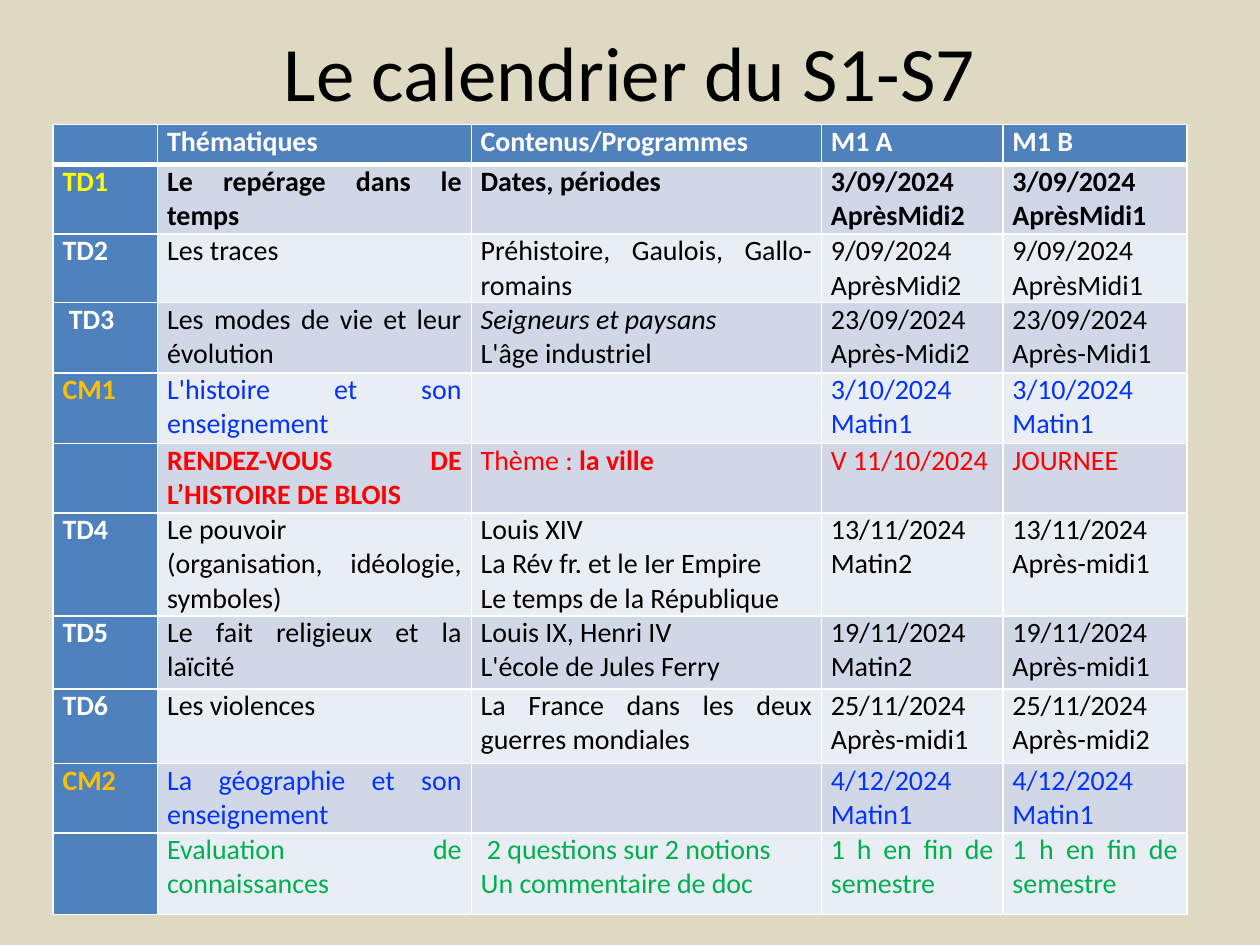
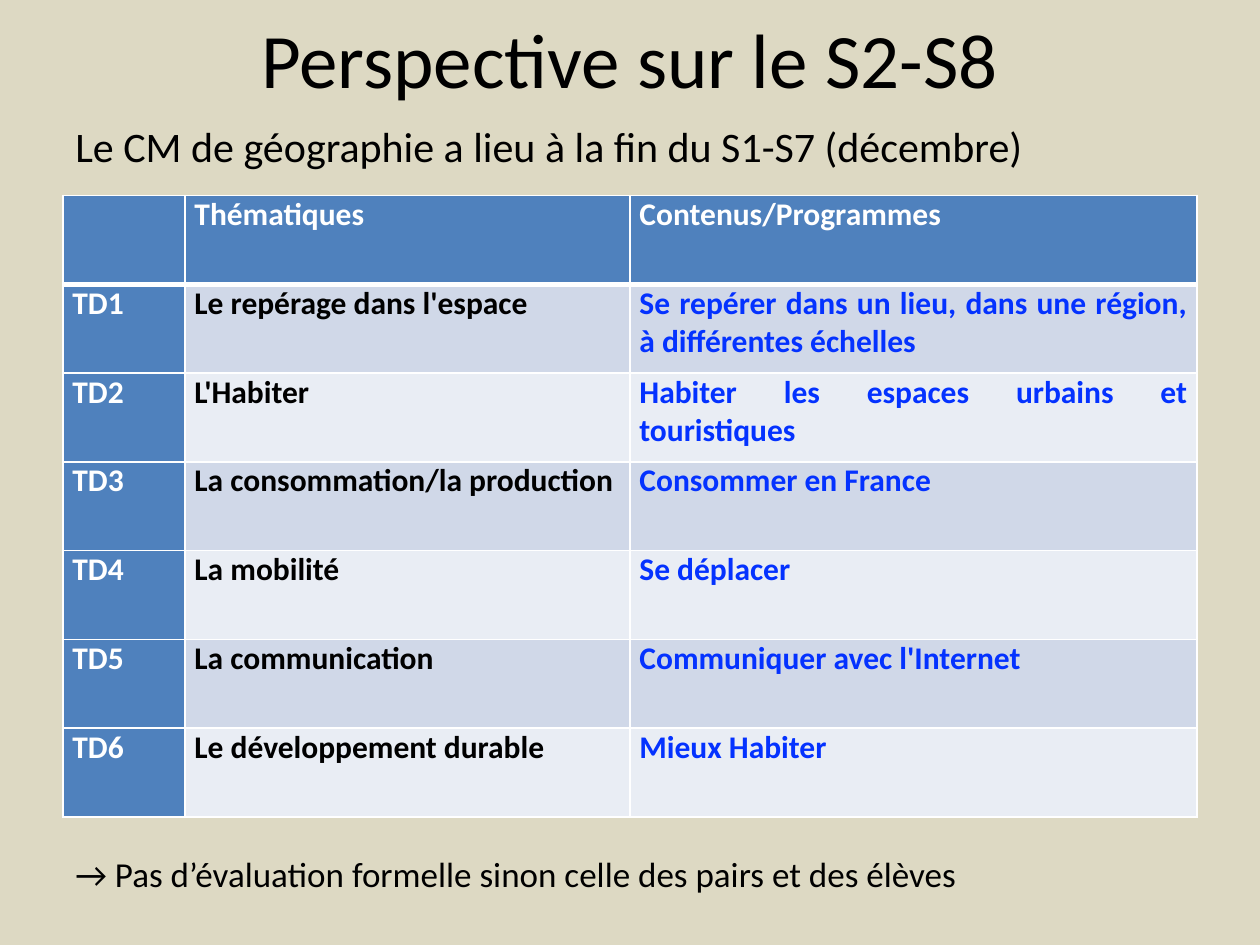
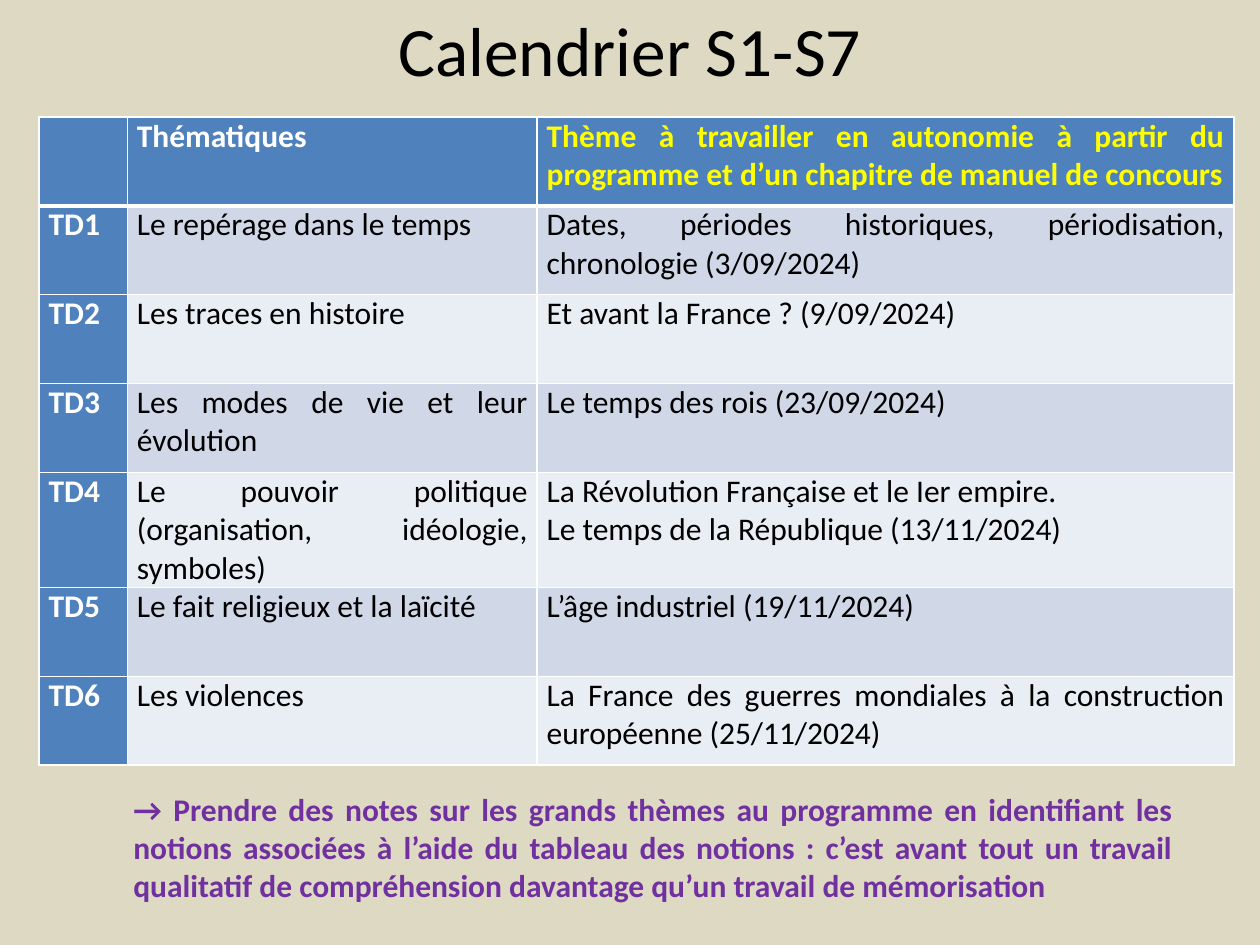
from lxml.etree import SubElement
from pptx import Presentation
from pptx.dml.color import RGBColor
from pptx.enum.text import MSO_ANCHOR as Anchor, MSO_AUTO_SIZE as AutoSize, PP_ALIGN as Align
from pptx.oxml.ns import qn
from pptx.util import Cm, Pt

FONT = "Calibri"
BEIGE, WHITE, BLACK = "DDD9C3", "FFFFFF", "000000"
HEADER, BANDS = "4F81BD", ("D0D8E8", "E9EDF4")
YELLOW, ORANGE, BLUE = "FFFF00", "FFC000", "0432FF"
RED, GREEN, PURPLE = "FF0000", "00B050", "7030A0"


def rgb(value):
    return RGBColor.from_string(value)


def set_borders(cell, **widths):
    """Draw white borders; widths are points keyed by side (L, R, T, B)."""
    tc_pr = cell._tc.get_or_add_tcPr()
    for side in "LRTB":
        ln = SubElement(tc_pr, qn(f"a:ln{side}"), w=str(Pt(widths.get(side, 1))))
        fill = SubElement(ln, qn("a:solidFill"))
        SubElement(fill, qn("a:srgbClr"), val=WHITE)


class Deck:
    """Holds the shared style and the current slide."""

    def __init__(self):
        self.prs = Presentation()
        self.prs.slide_width, self.prs.slide_height = Cm(25.4), Cm(19.05)

    def add_slide(self, title, height, size=44):
        self.s = self.prs.slides.add_slide(self.prs.slide_layouts[6])
        fill = self.s.background.fill
        fill.solid()
        fill.fore_color.rgb = rgb(BEIGE)
        tf = self.text(title, 1.27, 0, 22.86, height, size, align=Align.CENTER)
        tf.vertical_anchor = Anchor.MIDDLE

    def fill_text(self, tf, text, size, color=BLACK, bold=False, align=Align.LEFT):
        """Fill a text frame, one paragraph per line of text."""
        tf.text = text
        for p in tf.paragraphs:
            p.alignment = align
            p.font.name, p.font.size, p.font.bold = FONT, Pt(size), bold
            p.font.color.rgb = rgb(color)

    def text(self, text, x, y, w, h, size, wrap=True, **style):
        tf = self.s.shapes.add_textbox(Cm(x), Cm(y), Cm(w), Cm(h)).text_frame
        tf.word_wrap, tf.auto_size = wrap, AutoSize.NONE
        self.fill_text(tf, text, size, **style)
        return tf

    def table(self, x, y, widths, heights, rows, size, color_of, bold_body=False):
        """Add a banded table; color_of(row, col) gives each text colour."""
        table = self.s.shapes.add_table(
            len(rows), len(widths), Cm(x), Cm(y), Cm(sum(widths)), Cm(sum(heights))).table
        for col, width in zip(table.columns, widths):
            col.width = Cm(width)
        for i, (row, height) in enumerate(zip(rows, heights)):
            table.rows[i].height = Cm(height)
            for j, text in enumerate(row):
                cell = table.cell(i, j)
                cell.margin_left = cell.margin_right = Cm(0.19)
                cell.margin_top = cell.margin_bottom = 0
                is_header = i == 0 or j == 0
                self.fill_text(cell.text_frame, text, size, color_of(i, j),
                               is_header or bold_body, Align.JUSTIFY)
                set_borders(cell, T=3 if i == 1 else 1, B=3 if i == 0 else 1)
                cell.fill.solid()
                cell.fill.fore_color.rgb = rgb(HEADER if is_header else BANDS[(i - 1) % 2])
        return table


def build_calendar(deck):
    deck.add_slide("Le calendrier du S1-S7", 2.84)
    rows = [
        ("", "Thématiques", "Contenus/Programmes", "M1 A", "M1 B"),
        ("TD1", "Le repérage dans le temps", "Dates, périodes",
         "3/09/2024\nAprèsMidi2", "3/09/2024\nAprèsMidi1"),
        ("TD2", "Les traces", "Préhistoire, Gaulois, Gallo-romains",
         "9/09/2024\nAprèsMidi2", "9/09/2024\nAprèsMidi1"),
        (" TD3", "Les modes de vie et leur évolution",
         "Seigneurs et paysans\nL'âge industriel",
         "23/09/2024\nAprès-Midi2", "23/09/2024\nAprès-Midi1"),
        ("CM1", "L'histoire et son enseignement", "",
         "3/10/2024\nMatin1", "3/10/2024\nMatin1"),
        ("", "RENDEZ-VOUS DE L’HISTOIRE DE BLOIS", "Thème : ", "V 11/10/2024", "JOURNEE"),
        ("TD4", "Le pouvoir\n(organisation, idéologie, symboles)",
         "Louis XIV\nLa Rév fr. et le Ier Empire\nLe temps de la République",
         "13/11/2024\nMatin2", "13/11/2024\nAprès-midi1"),
        ("TD5", "Le fait religieux et la laïcité",
         "Louis IX, Henri IV\nL'école de Jules Ferry",
         "19/11/2024\nMatin2", "19/11/2024\nAprès-midi1"),
        ("TD6", "Les violences", "La France dans les deux guerres mondiales",
         "25/11/2024\nAprès-midi1", "25/11/2024\nAprès-midi2"),
        ("CM2", "La géographie et son enseignement", "",
         "4/12/2024\nMatin1", "4/12/2024\nMatin1"),
        ("", "Evaluation de connaissances", " 2 questions sur 2 notions\nUn commentaire de doc",
         "1 h en fin de semestre", "1 h en fin de semestre"),
    ]
    label_colors = {1: YELLOW, 4: ORANGE, 9: ORANGE}
    row_colors = {0: WHITE, 4: BLUE, 5: RED, 9: BLUE, 10: GREEN}

    def color_of(i, j):
        return row_colors.get(i, BLACK) if j else label_colors.get(i, WHITE)

    heights = (0.81, 1.4, 1.37, 1.42, 1.42, 1.4, 2.08, 1.47, 1.5, 1.4, 1.65)
    table = deck.table(1.07, 2.51, (2.11, 6.32, 7.06, 3.66, 3.71), heights, rows, 16, color_of)

    for j in range(1, 5):
        for p in table.cell(1, j).text_frame.paragraphs:
            p.font.bold = True
    table.cell(3, 2).text_frame.paragraphs[0].font.italic = True
    table.cell(5, 1).text_frame.paragraphs[0].font.bold = True
    r = table.cell(5, 2).text_frame.paragraphs[0].add_run()
    r.text, r.font.bold = "la ville", True


def build_perspective(deck):
    deck.add_slide("Perspective sur le S2-S8", 2.31)
    rows = [
        ("", "Thématiques", "Contenus/Programmes"),
        ("TD1", "Le repérage dans l'espace",
         "Se repérer dans un lieu, dans une région, à différentes échelles"),
        ("TD2", "L'Habiter", "Habiter les espaces urbains et touristiques"),
        ("TD3", "La consommation/la production", "Consommer en France"),
        ("TD4", "La mobilité", "Se déplacer"),
        ("TD5", "La communication", "Communiquer avec l'Internet"),
        ("TD6", "Le développement durable", "Mieux Habiter"),
    ]
    deck.table(1.27, 3.94, (2.46, 8.97, 11.43), [1.79] * len(rows), rows, 18,
               lambda i, j: (WHITE, BLACK, BLUE)[j] if i else WHITE, bold_body=True)
    deck.text("Le CM de géographie a lieu à la fin du S1-S7 (décembre)",
              1.27, 2.31, 19.74, 1.27, 24, wrap=False)
    deck.text("→ Pas d’évaluation formelle sinon celle des pairs et des élèves",
              1.27, 17.07, 18.44, 1.12, 20, wrap=False)


def build_self_study(deck):
    deck.add_slide("Calendrier S1-S7", 1.96, 39.6)
    rows = [
        ("", "Thématiques", "Thème à travailler en autonomie à partir du programme "
                            "et d’un chapitre de manuel de concours"),
        ("TD1", "Le repérage dans le temps",
         "Dates, périodes historiques, périodisation, chronologie (3/09/2024)"),
        ("TD2", "Les traces en histoire", "Et avant la France ? (9/09/2024)"),
        ("TD3", "Les modes de vie et leur évolution", "Le temps des rois (23/09/2024)"),
        ("TD4", "Le pouvoir politique (organisation, idéologie, symboles)",
         "La Révolution Française et le Ier empire.\nLe temps de la République (13/11/2024)"),
        ("TD5", "Le fait religieux et la laïcité", "L’âge industriel (19/11/2024)"),
        ("TD6", "Les violences",
         "La France des guerres mondiales à la construction européenne (25/11/2024)"),
    ]
    deck.table(0.79, 2.36, (1.78, 8.26, 14.05), [1.79] * len(rows), rows, 18,
               lambda i, j: (WHITE, BLACK, BLACK)[j] if i else (WHITE, WHITE, YELLOW)[j])
    deck.text("→ Prendre des notes sur les grands thèmes au programme en identifiant les notions "
              "associées à l’aide du tableau des notions : c’est avant tout un travail qualitatif "
              "de compréhension davantage qu’un travail de mémorisation",
              2.44, 15.8, 21.46, 2.57, 18, color=PURPLE, bold=True, align=Align.JUSTIFY)


def main():
    deck = Deck()
    build_calendar(deck)
    build_perspective(deck)
    build_self_study(deck)
    deck.prs.save("out.pptx")


if __name__ == "__main__":
    main()
